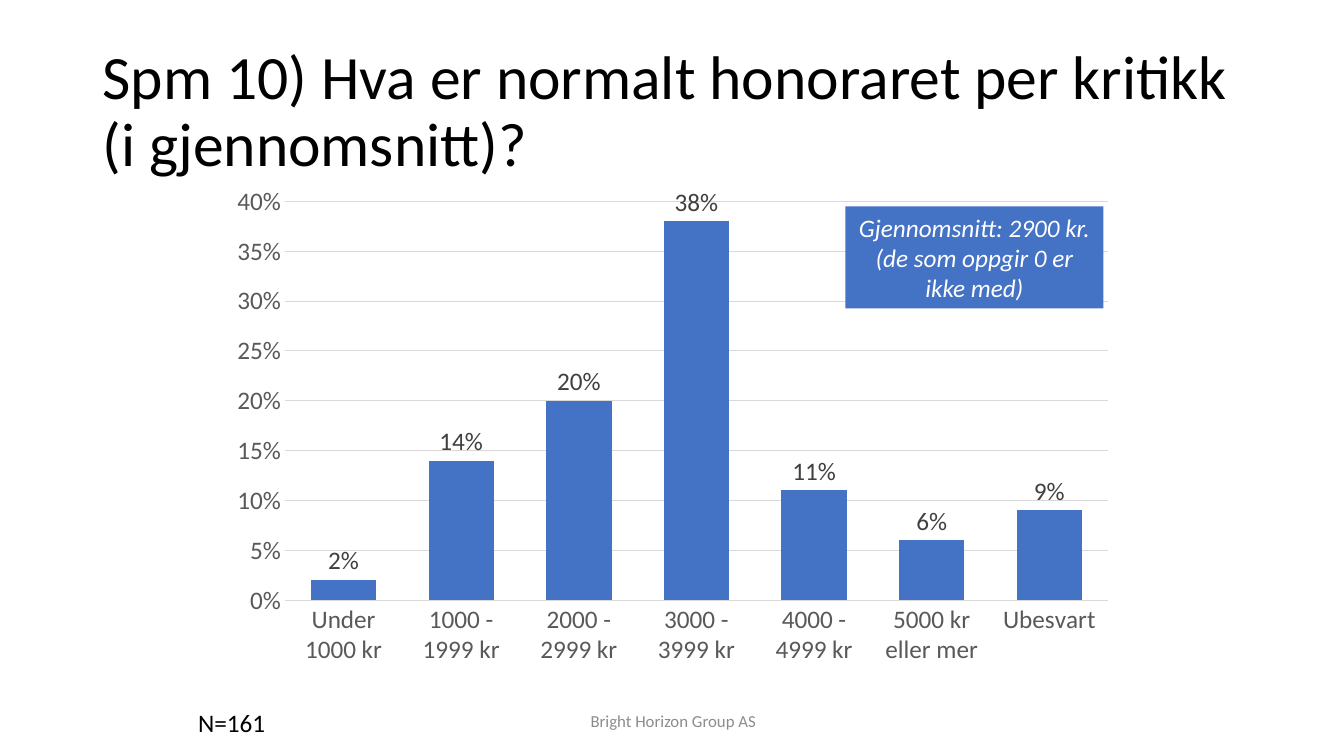
from pptx import Presentation
from pptx.chart.data import CategoryChartData
from pptx.dml.color import RGBColor
from pptx.enum.chart import XL_CHART_TYPE as ChartType, XL_LABEL_POSITION as LabelPosition, XL_TICK_MARK as TickMark
from pptx.enum.shapes import MSO_SHAPE as Shape
from pptx.enum.text import MSO_ANCHOR as Anchor, PP_ALIGN as Align
from pptx.util import Inches, Pt


def color(value):
    return RGBColor.from_string(value)


class SlideBuilder:
    FONT = "Calibri"
    BLUE, BLACK, WHITE = "4472C4", "000000", "FFFFFF"
    AXIS, LABEL, GRID, FOOTER = "595959", "404040", "D9D9D9", "8C8C8C"

    def __init__(self, deck):
        self.deck = deck
        self.slide = deck.slides.add_slide(deck.slide_layouts[6])

    def place(self, left, top, width, height):
        across, down = self.deck.slide_width, self.deck.slide_height
        return [round(share * length) for share, length in
                zip((left, top, width, height), (across, down, across, down))]

    def style(self, font, size, tone):
        font.name = self.FONT
        font.size = Pt(size)
        font.color.rgb = color(tone)

    def fill_text(self, box, words, size, tone, align=Align.LEFT, anchor=Anchor.MIDDLE,
                  wrap=True, spacing=None, italic=None):
        frame = box.text_frame
        frame.word_wrap = wrap
        frame.vertical_anchor = anchor
        para = frame.paragraphs[0]
        para.text = words
        para.alignment = align
        para.line_spacing = spacing
        for span in para.runs:
            self.style(span.font, size, tone)
            span.font.italic = italic

    def text(self, area, words, size, tone, **options):
        box = self.slide.shapes.add_textbox(*self.place(*area))
        self.fill_text(box, words, size, tone, **options)

    def callout(self, area, words, size):
        box = self.slide.shapes.add_shape(Shape.RECTANGLE, *self.place(*area))
        box.shadow.inherit = False
        box.fill.solid()
        box.fill.fore_color.rgb = color(self.BLUE)
        box.line.fill.background()
        self.fill_text(box, words, size, self.WHITE, align=Align.CENTER, italic=True)

    def rule(self, line):
        line.color.rgb = color(self.GRID)
        line.width = Pt(0.75)

    def columns(self, area, shares, size):
        data = CategoryChartData(number_format="0%")
        data.categories = list(shares)
        data.add_series("Andel", list(shares.values()))
        frame = self.slide.shapes.add_chart(ChartType.COLUMN_CLUSTERED, *self.place(*area), data)
        chart = frame.chart
        chart.has_legend = False
        chart.has_title = False
        self.style(chart.font, size, self.BLACK)

        for axis in (chart.category_axis, chart.value_axis):
            axis.major_tick_mark = axis.minor_tick_mark = TickMark.NONE
            self.style(axis.tick_labels.font, size, self.AXIS)
        self.rule(chart.category_axis.format.line)

        values = chart.value_axis
        values.minimum_scale, values.maximum_scale, values.major_unit = 0, 0.4, 0.05
        values.tick_labels.number_format = "0%"
        values.tick_labels.number_format_is_linked = False
        values.format.line.fill.background()
        self.rule(values.major_gridlines.format.line)

        plot = chart.plots[0]
        plot.gap_width, plot.overlap = 80, -27
        plot.vary_by_categories = False
        series = plot.series[0]
        series.format.fill.solid()
        series.format.fill.fore_color.rgb = color(self.BLUE)
        labels = series.data_labels
        labels.show_value = True
        labels.number_format = "0%"
        labels.number_format_is_linked = False
        labels.position = LabelPosition.OUTSIDE_END
        self.style(labels.font, size, self.LABEL)


def main():
    deck = Presentation()
    deck.slide_width, deck.slide_height = Inches(13.33), Inches(7.5)
    page = SlideBuilder(deck)

    fees = {
        "Under 1000 kr": 0.02,
        "1000 - 1999 kr": 0.14,
        "2000 - 2999 kr": 0.20,
        "3000 - 3999 kr": 0.38,
        "4000 - 4999 kr": 0.11,
        "5000 kr eller mer": 0.06,
        "Ubesvart": 0.09,
    }
    page.text((0.069, 0.053, 0.863, 0.193),
              "Spm 10) Hva er normalt honoraret per kritikk (i gjennomsnitt)?",
              44, page.BLACK, spacing=0.9)
    page.columns((0.163, 0.233, 0.675, 0.66), fees, 18)
    page.text((0.332, 0.927, 0.338, 0.053), "Bright Horizon Group AS",
              12, page.FOOTER, align=Align.CENTER)
    page.callout((0.629, 0.273, 0.192, 0.135),
                 "Gjennomsnitt: 2900 kr.\n(de som oppgir 0 er ikke med)", 18)
    page.text((0.14, 0.929, 0.065, 0.053), "N=161", 18, page.BLACK,
              anchor=Anchor.TOP, wrap=False)
    deck.save("out.pptx")


if __name__ == "__main__":
    main()
